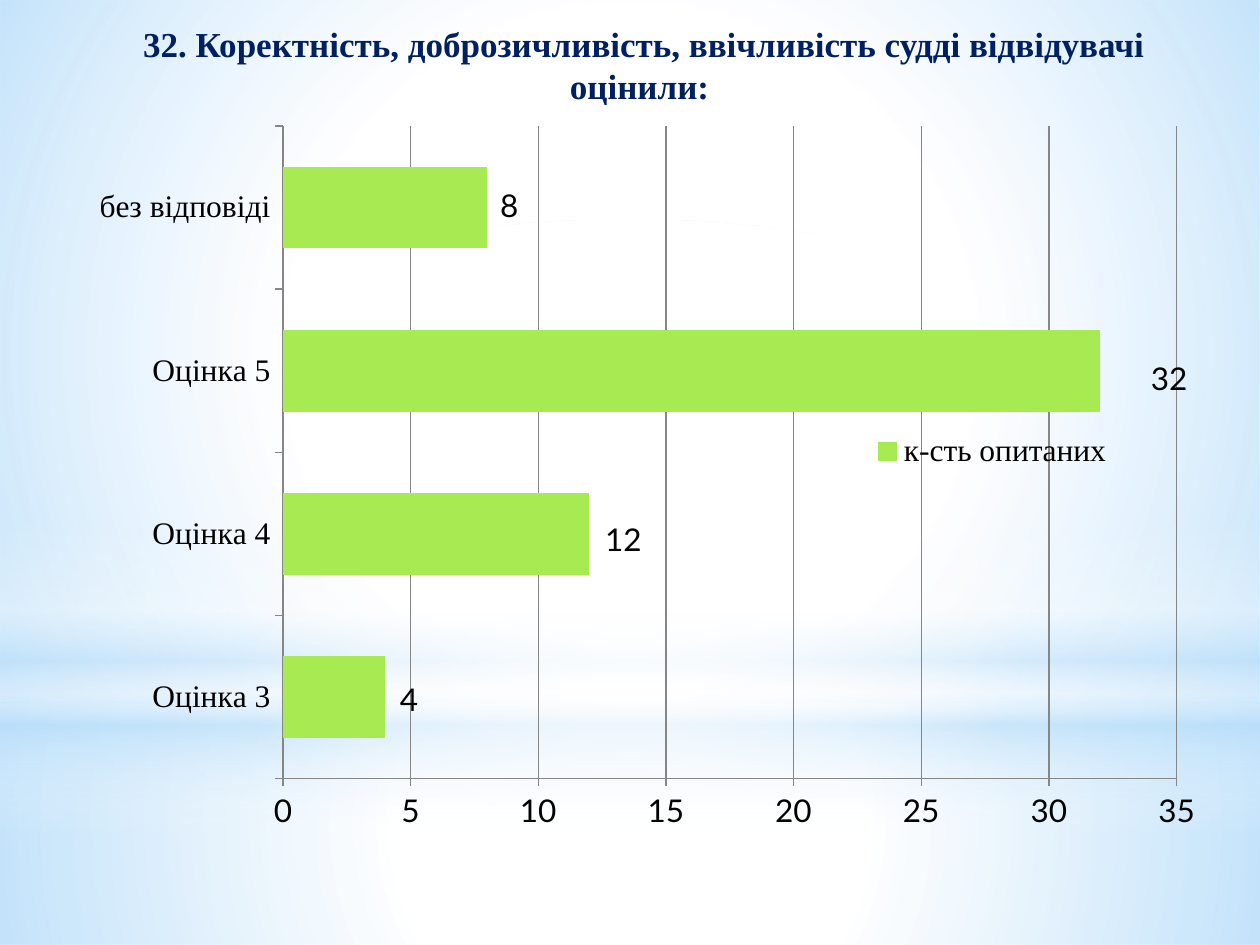
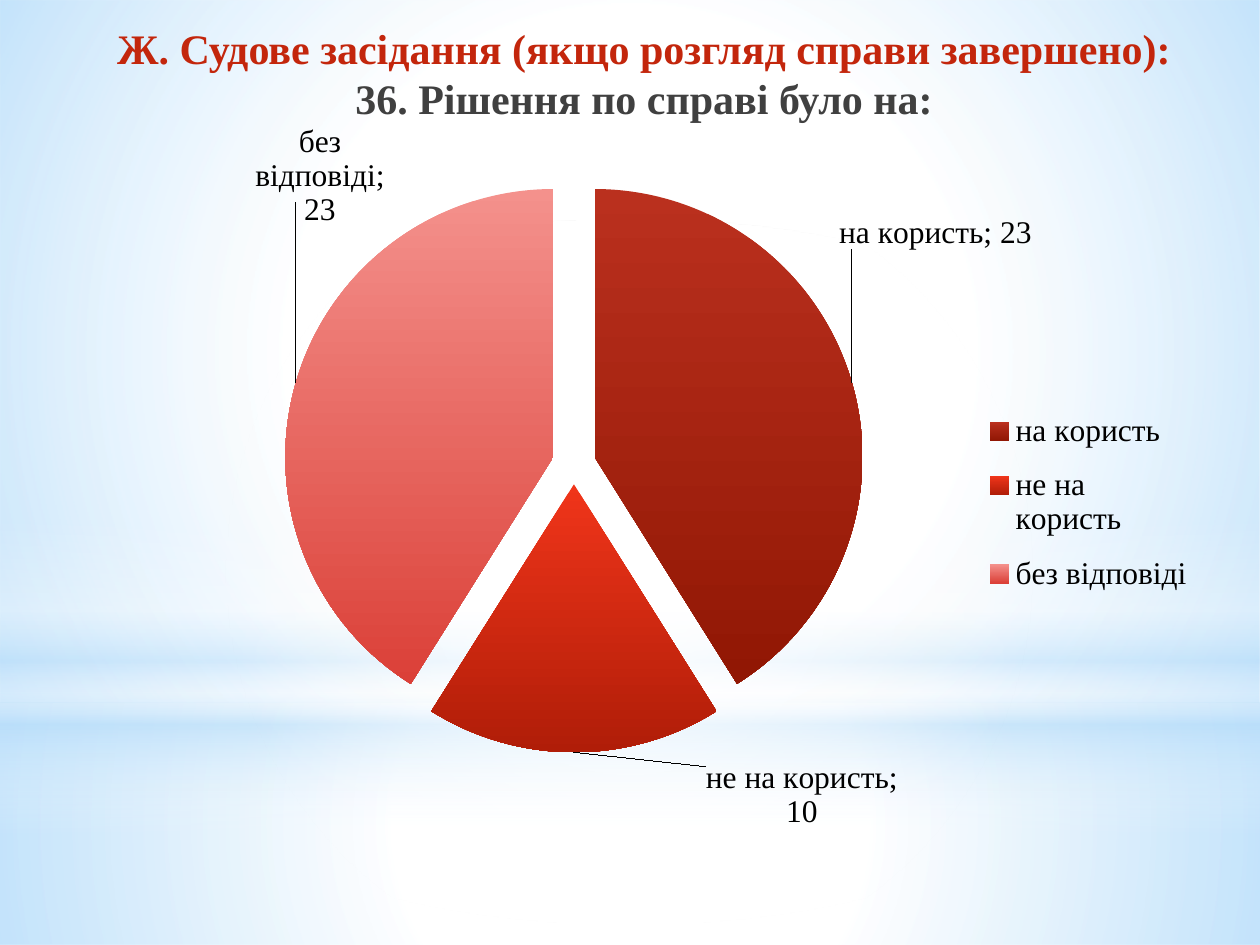
import pptx
import pptx.chart.data
import pptx.dml.color
import pptx.enum.chart
import pptx.enum.shapes
import pptx.enum.text
import pptx.oxml.ns
import pptx.util
from lxml import etree

EMU_PER_PX = 914400 / 126
COLORS = {
    "white": "FFFFFF", "sky": "B4DCFA", "navy": "002060", "red": "C3260C",
    "gray": "404040", "black": "000000", "line": "868686", "green": "A7EA52",
}
SERIF, SANS = "Times New Roman", "Lato"
TITLE_BOX = (64, 16, 1160, 110)

# shape, box, stops (position %, colour, opacity %), radial or vertical
RECT = pptx.enum.shapes.MSO_SHAPE.RECTANGLE
OVAL = pptx.enum.shapes.MSO_SHAPE.OVAL
BACKDROP = [
    (RECT, (0, 703, 1260, 242),
     [(0, "white", 91), (37, "white", 76), (100, "sky", 79)], "radial"),
    (RECT, (0, 0, 1260, 703),
     [(0, "white", 89), (48, "white", 62), (100, "sky", 79)], "radial"),
    (RECT, (0, 519, 1260, 315),
     [(0, "white", 0), (29, "white", 30), (45, "sky", 40), (55, "white", 26),
      (65, "sky", 60), (100, "white", 0)], "vertical"),
    (OVAL, (0, 220, 1260, 703), [(0, "white", 100), (56, "white", 0)], "radial"),
]

# Boxes are px on the slide; label shifts are px from the automatic place
POLITENESS = {
    "title": [("32. Коректність, доброзичливість, ввічливість судді відвідувачі оцінили: ",
               "navy")],
    "title_size": 20,
    "type": pptx.enum.chart.XL_CHART_TYPE.BAR_CLUSTERED,
    "box": (84, 125, 1111, 704),
    "font": SANS,
    "series": "к-сть опитаних",
    "values": {"Оцінка 3": 4, "Оцінка 4": 12, "Оцінка 5": 32, "без відповіді": 8},
    "plot": (283, 126, 894, 656),
    "legend": (876, 432, 233, 42),
    "label_shifts": {0: (10, 2), 1: (11, 5), 2: (46, 7), 3: (8, -2)},
}
DECISION = {
    "title": [("Ж. Судове засідання (якщо розгляд справи завершено):", "red"),
              ("36. Рішення по справі було на:", "gray")],
    "title_size": 24,
    "type": pptx.enum.chart.XL_CHART_TYPE.PIE,
    "box": (94, 125, 1111, 704),
    "font": SERIF,
    "series": "Series 1",
    "values": {"на користь": 23, "не на користь": 10, "без відповіді": 23},
    "plot": (306, 195, 536, 536),
    "legend": (994, 394, 205, 217),
    "label_shifts": {0: (-20, -131), 1: (228, 7), 2: (96, -178)},
}
SLICE_GRADIENTS = [("BA301E", "911704"), ("F0351A", "B01D08"), ("F4918C", "DB4038")]
EXPLOSION = 8
WIDE_LABEL, WIDE_LABEL_SIZE = 2, (240, 42)
C15 = "http://schemas.microsoft.com/office/drawing/2012/chart"
LABEL_LAYOUT_URI = "{CE6537A1-D6FC-4f65-9D91-7224C49458BB}"


def px(length):
    return pptx.util.Emu(round(length * EMU_PER_PX))


def rgb(hex_color):
    return pptx.dml.color.RGBColor.from_string(hex_color)


def add_tag(parent, tag, **attributes):
    return etree.SubElement(parent, pptx.oxml.ns.qn(tag),
                            {name: str(value) for name, value in attributes.items()})


def set_gradient(shape, stops, direction):
    """Fill a shape with a gradient whose stops have their own opacity."""
    shape.fill.solid()
    solid = shape.element.xpath("p:spPr/a:solidFill")[0]
    gradient = etree.Element(pptx.oxml.ns.qn("a:gradFill"), rotWithShape="1")
    stop_list = add_tag(gradient, "a:gsLst")
    for position, color, opacity in stops:
        stop = add_tag(stop_list, "a:gs", pos=position * 1000)
        color_tag = add_tag(stop, "a:srgbClr", val=COLORS[color])
        add_tag(color_tag, "a:alpha", val=opacity * 1000)
    if direction == "radial":
        circle = add_tag(gradient, "a:path", path="circle")
        add_tag(circle, "a:fillToRect", l=50000, t=50000, r=50000, b=50000)
    else:
        add_tag(gradient, "a:lin", ang=5400000, scaled=0)
    solid.getparent().replace(solid, gradient)


def add_backdrop(master, slide):
    """Draw the backdrop on a slide, then move it behind the master's placeholders."""
    for order, (kind, box, stops, direction) in enumerate(BACKDROP):
        shape = slide.shapes.add_shape(kind, *map(px, box))
        shape.shadow.inherit = False
        shape.line.fill.background()
        set_gradient(shape, stops, direction)
        shape.element.xpath("p:nvSpPr/p:cNvPr")[0].set("id", str(100 + order))
        master.shapes.element.insert(2 + order, shape.element)


def set_title(slide, lines, size):
    title = slide.shapes.title
    title.left, title.top, title.width, title.height = map(px, TITLE_BOX)
    frame = title.text_frame
    frame.word_wrap = True
    frame.auto_size = pptx.enum.text.MSO_AUTO_SIZE.NONE
    frame.vertical_anchor = pptx.enum.text.MSO_ANCHOR.TOP
    para = frame.paragraphs[0]
    para.alignment = pptx.enum.text.PP_ALIGN.CENTER
    para.font.name, para.font.size, para.font.bold = SERIF, pptx.util.Pt(size), True
    for number, (text, color) in enumerate(lines):
        if number:
            para.add_line_break()
        span = para.add_run()
        span.text = text
        span.font.color.rgb = rgb(COLORS[color])


def add_manual_layout(layout, **values):
    manual = add_tag(layout, "c:manualLayout")
    for name, value in values.items():
        add_tag(manual, f"c:{name}", val=value)


def set_layout(parent, index, **values):
    """Give a chart part a manual layout as its child at the index."""
    for old in parent.xpath("c:layout"):
        parent.remove(old)
    layout = etree.Element(pptx.oxml.ns.qn("c:layout"))
    add_manual_layout(layout, **values)
    parent.insert(index, layout)


def set_frame(parent, index, chart_box, box, **target):
    """Place a chart part at a slide box, written as fractions of the chart."""
    left, top, width, height = chart_box
    set_layout(parent, index, **target, xMode="edge", yMode="edge",
               x=(box[0] - left) / width, y=(box[1] - top) / height,
               w=box[2] / width, h=box[3] / height)


def add_chart(slide, content):
    data = pptx.chart.data.CategoryChartData()
    data.categories = list(content["values"])
    data.add_series(content["series"], list(content["values"].values()))
    box = content["box"]
    chart = slide.shapes.add_chart(content["type"], *map(px, box), data).chart
    chart.has_title = False
    chart.font.name, chart.font.size = content["font"], pptx.util.Pt(18)
    chart.font.color.rgb = rgb(COLORS["black"])
    chart.has_legend = True
    legend = chart.legend
    legend.position = pptx.enum.chart.XL_LEGEND_POSITION.RIGHT
    legend.include_in_layout = False
    legend.font.name, legend.font.size = SERIF, pptx.util.Pt(18)
    plot_area = chart.element.xpath("c:chart/c:plotArea")[0]
    set_frame(plot_area, 0, box, content["plot"], layoutTarget="inner")
    set_frame(chart.element.xpath("c:chart/c:legend")[0], 1, box, content["legend"])

    series = chart.plots[0].series[0]
    labels = series.data_labels
    labels.show_value = True
    labels.position = pptx.enum.chart.XL_LABEL_POSITION.OUTSIDE_END
    for point, (dx, dy) in content["label_shifts"].items():
        series.points[point].data_label.position = labels.position
        label = find_label(chart, point)
        set_layout(label, 1, x=dx / box[2], y=dy / box[3])
    return chart


def find_label(chart, point):
    return chart.element.xpath(f".//c:dLbl[c:idx/@val='{point}']")[0]


def style_bars(chart):
    plot = chart.plots[0]
    plot.gap_width = 100
    plot.vary_by_categories = False
    bars = plot.series[0].format.fill
    bars.solid()
    bars.fore_color.rgb = rgb(COLORS["green"])
    for flag in chart.element.xpath(".//c:showLeaderLines"):
        flag.set("val", "0")
    values, categories = chart.value_axis, chart.category_axis
    values.minimum_scale, values.maximum_scale, values.major_unit = 0, 35, 5
    values.has_major_gridlines = True
    categories.tick_labels.font.name = SERIF
    categories.tick_labels.font.size = pptx.util.Pt(18)
    for axis in (values, categories):
        axis.major_tick_mark = pptx.enum.chart.XL_TICK_MARK.OUTSIDE
    for line in (values.format.line, categories.format.line,
                 values.major_gridlines.format.line):
        line.color.rgb = rgb(COLORS["line"])
        line.width = pptx.util.Pt(0.75)


def style_slices(chart):
    plot = chart.plots[0]
    plot.vary_by_categories = True
    series = plot.series[0]
    for number, colors in enumerate(SLICE_GRADIENTS):
        fill = series.points[number].format.fill
        fill.gradient()
        fill.gradient_angle = 270
        for stop, color in zip(fill.gradient_stops, colors):
            stop.color.rgb = rgb(color)
    for point in chart.element.xpath(".//c:dPt"):
        explosion = etree.Element(pptx.oxml.ns.qn("c:explosion"), val=str(EXPLOSION))
        point.xpath("c:spPr")[0].addprevious(explosion)
    for flag in chart.element.xpath(".//c:ser//c:showCatName"):
        flag.set("val", "1")
    for flag in chart.element.xpath(".//c:ser//c:showBubbleSize"):
        separator = etree.Element(pptx.oxml.ns.qn("c:separator"))
        separator.text = "; "
        flag.addnext(separator)
    widen_label(find_label(chart, WIDE_LABEL))


def widen_label(label):
    """Give a label enough width to stay on one line."""
    extension = add_tag(add_tag(label, "c:extLst"), "c:ext", uri=LABEL_LAYOUT_URI)
    layout = etree.SubElement(extension, f"{{{C15}}}layout", nsmap={"c15": C15})
    width, height = WIDE_LABEL_SIZE
    add_manual_layout(layout, w=width / DECISION["box"][2], h=height / DECISION["box"][3])


def main():
    deck = pptx.Presentation()
    deck.slide_width, deck.slide_height = px(1260), px(945)
    for content, style in ((POLITENESS, style_bars), (DECISION, style_slices)):
        slide = deck.slides.add_slide(deck.slide_layouts[5])
        set_title(slide, content["title"], content["title_size"])
        style(add_chart(slide, content))
    add_backdrop(deck.slide_master, deck.slides[0])
    deck.save("out.pptx")


if __name__ == "__main__":
    main()
